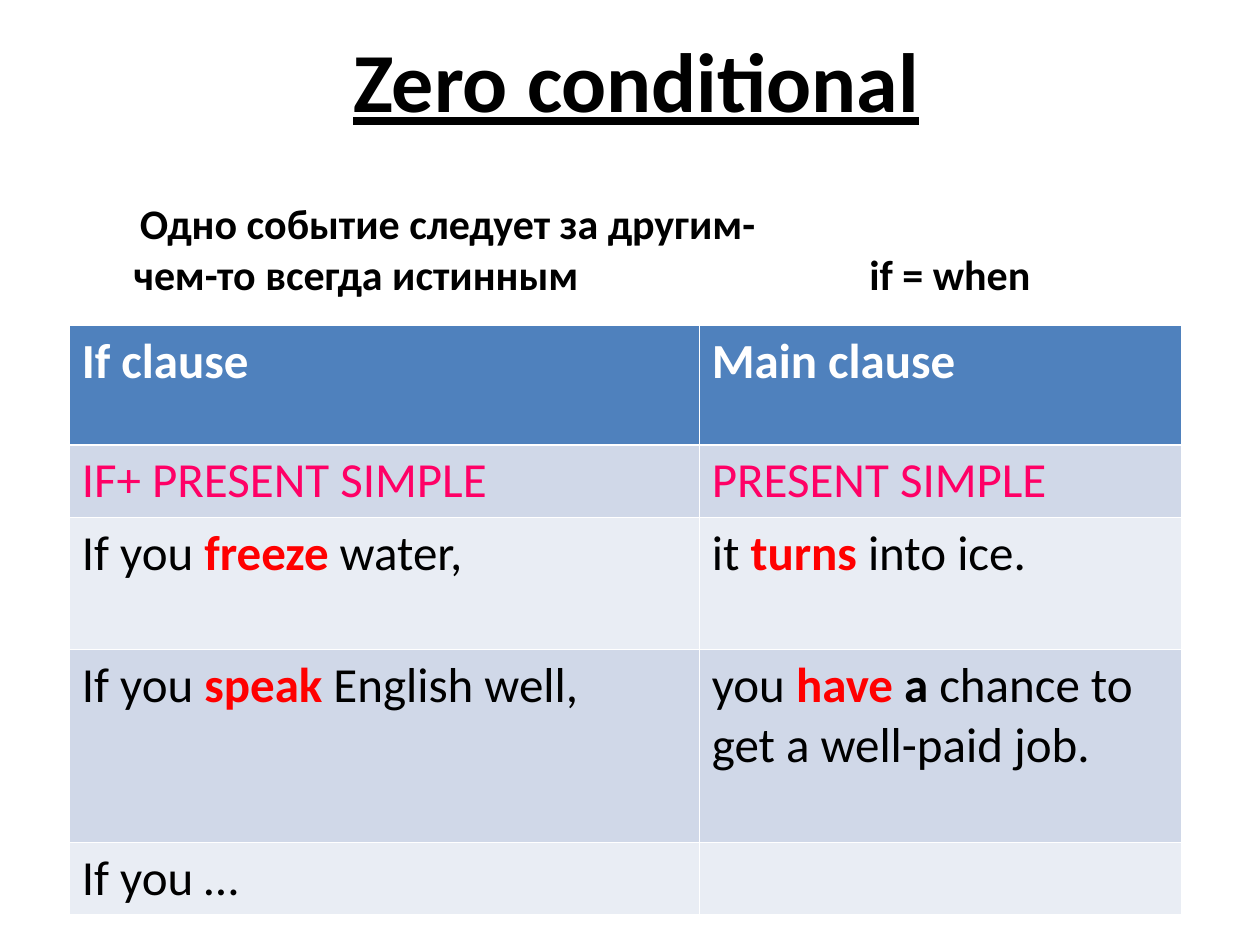
from dataclasses import dataclass

from pptx import Presentation
from pptx.dml.color import RGBColor
from pptx.enum.text import MSO_ANCHOR, PP_ALIGN
from pptx.util import Inches, Pt

CENTER, LEFT = PP_ALIGN.CENTER, PP_ALIGN.LEFT
MIDDLE, BOTTOM = MSO_ANCHOR.MIDDLE, MSO_ANCHOR.BOTTOM
FONT = "Calibri"
COLORS = {
    "black": "000000",
    "white": "FFFFFF",
    "red": "FF0000",
    "pink": "FF0066",
    "header": "4F81BD",
    "dark_band": "D0D8E8",
    "light_band": "E9EDF4",
}


@dataclass
class Piece:
    text: str
    color: str = "black"
    bold: bool = False


@dataclass
class Row:
    height: float
    fill: str
    cells: list[list[Piece]]


@dataclass
class TextBlock:
    placeholder: int
    text: str
    box: tuple[float, float, float, float]
    size: int
    alignment: PP_ALIGN
    anchor: MSO_ANCHOR
    underline: bool = False
    margin: float = 0
    indent: float = 0


BLOCKS = [
    TextBlock(0, "Zero conditional", (0.55, 0, 9, 1.25), 48, CENTER, MIDDLE, underline=True),
    TextBlock(1, "Одно событие следует за другим- чем-то всегда истинным",
              (0.78, 1.33, 5.55, 1.09), 24, LEFT, BOTTOM, margin=0.18, indent=0.05),
    TextBlock(3, "if = when", (6.8, 1.72, 1.95, 0.7), 24, LEFT, BOTTOM),
]

COLUMN_WIDTHS = [5, 3.83]
ROWS = [
    Row(0.95, "header", [[Piece("If clause", "white", True)],
                         [Piece("Main clause", "white", True)]]),
    Row(0.57, "dark_band", [[Piece("IF+ PRESENT SIMPLE", "pink")],
                            [Piece("PRESENT SIMPLE", "pink")]]),
    Row(1.05, "light_band", [
        [Piece("If you "), Piece("freeze ", "red", True), Piece("water,")],
        [Piece("it "), Piece("turns", "red", True), Piece(" into ice.")],
    ]),
    Row(1.53, "dark_band", [
        [Piece("If you "), Piece("speak", "red", True), Piece(" English well,")],
        [Piece("you "), Piece("have ", "red", True), Piece("a", bold=True),
         Piece(" chance to get a well-paid job.")],
    ]),
    Row(0.57, "light_band", [[Piece("If you …")], []]),
]


def style_font(font, size: int, color: str, bold: bool) -> None:
    font.name = FONT
    font.size = Pt(size)
    font.bold = bold
    font.color.rgb = RGBColor.from_string(COLORS[color])


def fill_placeholder(slide, block: TextBlock) -> None:
    shape = slide.placeholders[block.placeholder]
    shape.left, shape.top, shape.width, shape.height = map(Inches, block.box)
    text_frame = shape.text_frame
    text_frame.text = block.text
    text_frame.word_wrap = True
    text_frame.vertical_anchor = block.anchor
    paragraph = text_frame.paragraphs[0]
    paragraph.alignment = block.alignment
    paragraph.space_before = Pt(0)
    properties = paragraph._p.get_or_add_pPr()
    properties.set("marL", str(Inches(block.margin)))
    properties.set("indent", str(Inches(block.indent)))
    font = paragraph.runs[0].font
    style_font(font, block.size, "black", True)
    font.underline = block.underline


def add_clause_table(slide, rows: list[Row], left: float, top: float) -> None:
    width = sum(COLUMN_WIDTHS)
    height = sum(row.height for row in rows)
    table = slide.shapes.add_table(
        len(rows), len(COLUMN_WIDTHS),
        Inches(left), Inches(top), Inches(width), Inches(height),
    ).table
    for column, column_width in zip(table.columns, COLUMN_WIDTHS):
        column.width = Inches(column_width)
    for table_row, row in zip(table.rows, rows):
        table_row.height = Inches(row.height)
        for cell, pieces in zip(table_row.cells, row.cells):
            cell.fill.solid()
            cell.fill.fore_color.rgb = RGBColor.from_string(COLORS[row.fill])
            paragraph = cell.text_frame.paragraphs[0]
            paragraph.font.size = Pt(28)
            for piece in pieces:
                run = paragraph.add_run()
                run.text = piece.text
                style_font(run.font, 28, piece.color, piece.bold)


def main() -> None:
    presentation = Presentation()
    presentation.slide_width = Inches(10)
    presentation.slide_height = Inches(7.5)
    comparison_layout = presentation.slide_layouts[4]
    slide = presentation.slides.add_slide(comparison_layout)
    for block in BLOCKS:
        fill_placeholder(slide, block)
    for placeholder in list(slide.placeholders):
        if not placeholder.text_frame.text:
            placeholder.element.getparent().remove(placeholder.element)
    add_clause_table(slide, ROWS, 0.55, 2.58)
    presentation.save("out.pptx")


if __name__ == "__main__":
    main()
